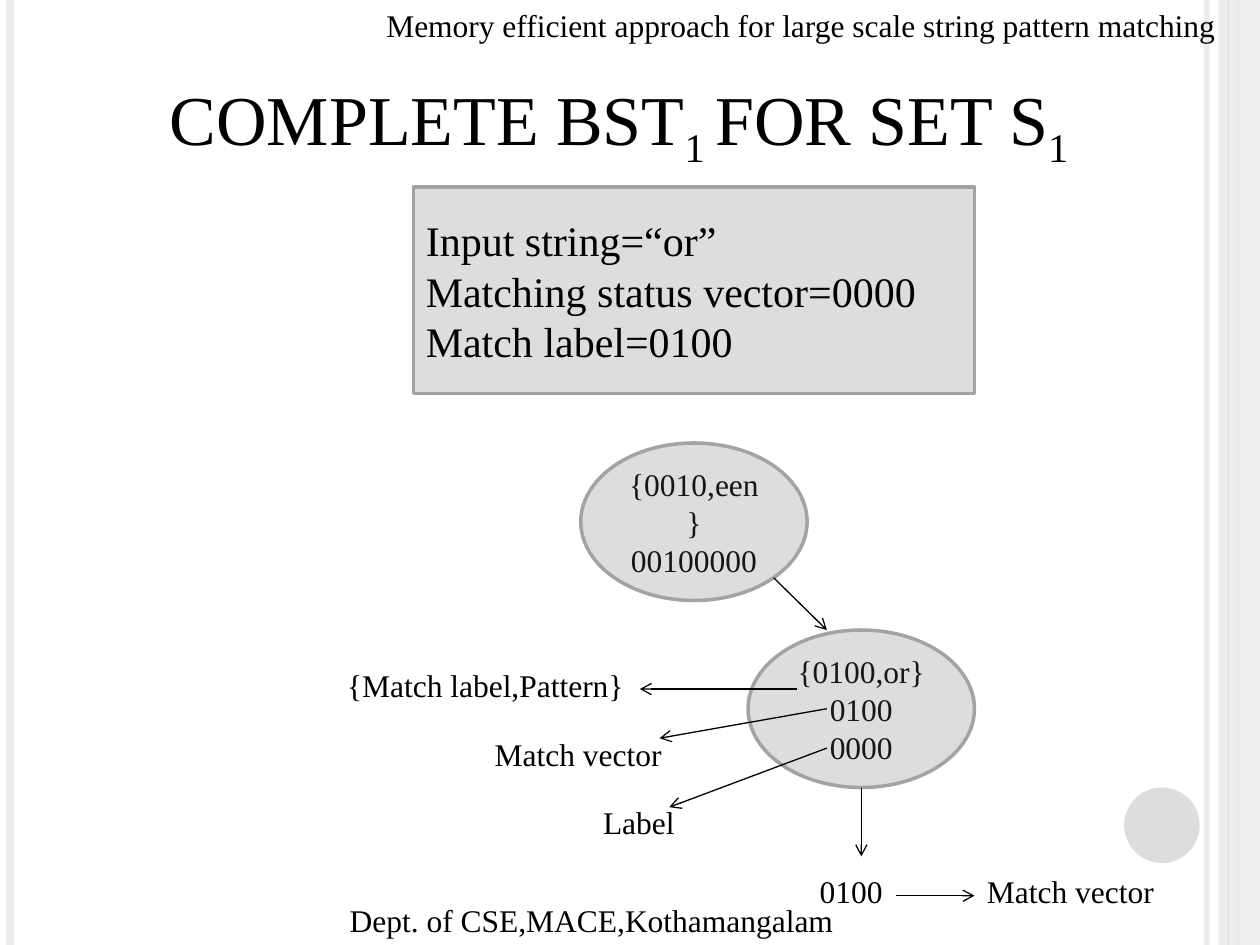
from lxml import etree
from pptx import Presentation
from pptx.dml.color import RGBColor
from pptx.enum.shapes import MSO_CONNECTOR, MSO_SHAPE
from pptx.enum.text import MSO_ANCHOR, PP_ALIGN
from pptx.oxml.ns import qn
from pptx.util import Inches, Pt

STRAIGHT = MSO_CONNECTOR.STRAIGHT
RECTANGLE, OVAL = MSO_SHAPE.RECTANGLE, MSO_SHAPE.OVAL
MIDDLE = MSO_ANCHOR.MIDDLE
LEFT, CENTER = PP_ALIGN.LEFT, PP_ALIGN.CENTER

FONT = "Times New Roman"
COLORS = {
    "text": "000000",
    "node_text": "161616",
    "fill": "DDDDDD",
    "outline": "A3A3A3",
    "pale": "EBEBEB",
}
COLUMNS, ROWS = 64, 48
CELL = Inches(10) / COLUMNS
LABEL_ROWS = 2.6
NODE_COLUMNS, NODE_ROWS = 11.5, 8


def cells(*counts):
    """Turn grid columns or rows into lengths."""
    return [round(count * CELL) for count in counts]


def color(name):
    return RGBColor.from_string(COLORS[name])


def set_alpha(fill_format_parent, percent):
    """Make the solid fill found below an XML element partly transparent."""
    solid = fill_format_parent.find(qn("a:solidFill"))
    etree.SubElement(solid[0], qn("a:alpha"), val=str(percent * 1000))


def add_line(slide, start, end, color_name="text", width=0.75, arrow=False):
    line = slide.shapes.add_connector(STRAIGHT, *cells(*start, *end))
    line.line.color.rgb = color(color_name)
    line.line.width = Pt(width)
    properties = line._element.spPr
    if arrow:
        etree.SubElement(properties.find(qn("a:ln")), qn("a:tailEnd"), type="arrow")
    etree.SubElement(properties, qn("a:effectLst"))
    return line


def add_shape(slide, kind, box, fill="fill", outline=None):
    shape = slide.shapes.add_shape(kind, *cells(*box))
    shape.shadow.inherit = False
    shape.fill.solid()
    shape.fill.fore_color.rgb = color(fill)
    if outline:
        shape.line.color.rgb = color(outline)
        shape.line.width = Pt(2)
    else:
        shape.line.fill.background()
    return shape


def add_run(paragraph, text, size, color_name="text", subscript=False):
    run = paragraph.add_run()
    run.text = text
    run.font.name = FONT
    run.font.size = Pt(size)
    run.font.color.rgb = color(color_name)
    if subscript:
        run._r.get_or_add_rPr().set("baseline", "-25000")


def write_lines(shape, lines, size, color_name="text", alignment=LEFT):
    frame = shape.text_frame
    frame.word_wrap = True
    frame.vertical_anchor = MIDDLE
    for index, text in enumerate(lines):
        paragraph = frame.add_paragraph() if index else frame.paragraphs[0]
        paragraph.alignment = alignment
        add_run(paragraph, text, size, color_name)


def add_label(slide, text, left, top, width, wrap=True, alignment=LEFT):
    label = slide.shapes.add_textbox(*cells(left, top, width, LABEL_ROWS))
    label.text_frame.word_wrap = wrap
    paragraph = label.text_frame.paragraphs[0]
    paragraph.alignment = alignment
    add_run(paragraph, text, 18)
    return label


def draw_border(slide, box):
    left, top, width, height = box
    right, bottom = left + width, top + height

    def stripe(x, color_name, line_width):
        return add_line(slide, (x, top), (x, bottom), color_name, line_width)

    inner = stripe(right - 2.7, "pale", 3)
    set_alpha(inner._element.spPr.find(qn("a:ln")), 93)
    stripe(left + 0.5, "pale", 4.5)
    stripe(right - 1.1, "fill", 1.5)
    band = add_shape(slide, RECTANGLE, (right - 2.1, top, 2.1, height), "pale")
    set_alpha(band._element.spPr, 87)
    stripe(right - 1.6, "fill", 0.75)
    add_shape(slide, OVAL, (right - 6.9, bottom - 8, 3.84, 3.84))


def draw_title(slide, box):
    title = slide.shapes.add_textbox(*cells(*box))
    title.text_frame.word_wrap = False
    paragraph = title.text_frame.paragraphs[0]
    parts = [("COMPLETE BST", False), ("1 ", True), ("FOR SET S", False), ("1", True)]
    for text, subscript in parts:
        add_run(paragraph, text, 40, subscript=subscript)


def draw_input_panel(slide, box):
    panel = add_shape(slide, RECTANGLE, box, outline="outline")
    write_lines(
        panel,
        ["Input string=“or”", "Matching status vector=0000", "Match label=0100"],
        24,
    )


def draw_node(slide, left, top, lines):
    node = add_shape(
        slide, OVAL, (left, top, NODE_COLUMNS, NODE_ROWS), outline="outline"
    )
    write_lines(node, lines, 18, "node_text", CENTER)


def draw_tree(slide, box):
    """Draw both nodes, their arrows and the labels that explain them."""
    left, top, width, height = box

    def place(x, y):
        return left + x, top + y

    draw_node(slide, *place(12.5, 0), ["{0010,een}", "00100000"])
    draw_node(slide, *place(21, 9.5), ["{0100,or}", "0100", "0000"])

    arrows = [
        ((22.3, 6.85), (25, 9.5)),
        ((26.75, 17.5), (26.75, 21)),
        ((23.5, 12.5), (15.5, 12.5)),
        ((25, 13.5), (16.5, 15)),
        ((25, 15.5), (17, 18.5)),
        ((28.5, 23), (32.5, 23)),
    ]
    for start, end in arrows:
        add_line(slide, place(*start), place(*end), arrow=True)

    labels = [
        ("{Match label,Pattern}", 0, 11, 18),
        ("Match vector", 7.5, 14.5, 16),
        ("Label", 13, 18, 15),
        ("0100", 24, 21.5, 8),
        ("Match vector", 32.5, 21.5, width - 32.5),
    ]
    for text, x, y, label_width in labels:
        add_label(slide, text, *place(x, y), label_width)


def draw_header(slide, box):
    left, top, width, _ = box
    header = add_label(
        slide,
        "Memory efficient approach for large scale string pattern matching",
        left, top, width,
    )
    header.text_frame.margin_left = Inches(0.41)
    header.text_frame.margin_right = 0


def draw_footer(slide, box):
    left, top, width, _ = box
    add_label(slide, "Dept. of CSE,MACE,Kothamangalam", left, top, width, False, CENTER)


def main():
    presentation = Presentation()
    presentation.slide_width, presentation.slide_height = cells(COLUMNS, ROWS)
    slide = presentation.slides.add_slide(presentation.slide_layouts[6])
    draw_border(slide, (0, 0, COLUMNS, ROWS))
    draw_title(slide, (8, 3.5, 47.75, 4.9))
    draw_input_panel(slide, (21, 9.5, 28.5, 10.5))
    draw_tree(slide, (17, 22.5, 42.5, 25.5))
    draw_footer(slide, (17, 45.45, 26.1, LABEL_ROWS))
    draw_header(slide, (17, 0, 45.5, LABEL_ROWS))
    presentation.save("out.pptx")


if __name__ == "__main__":
    main()
